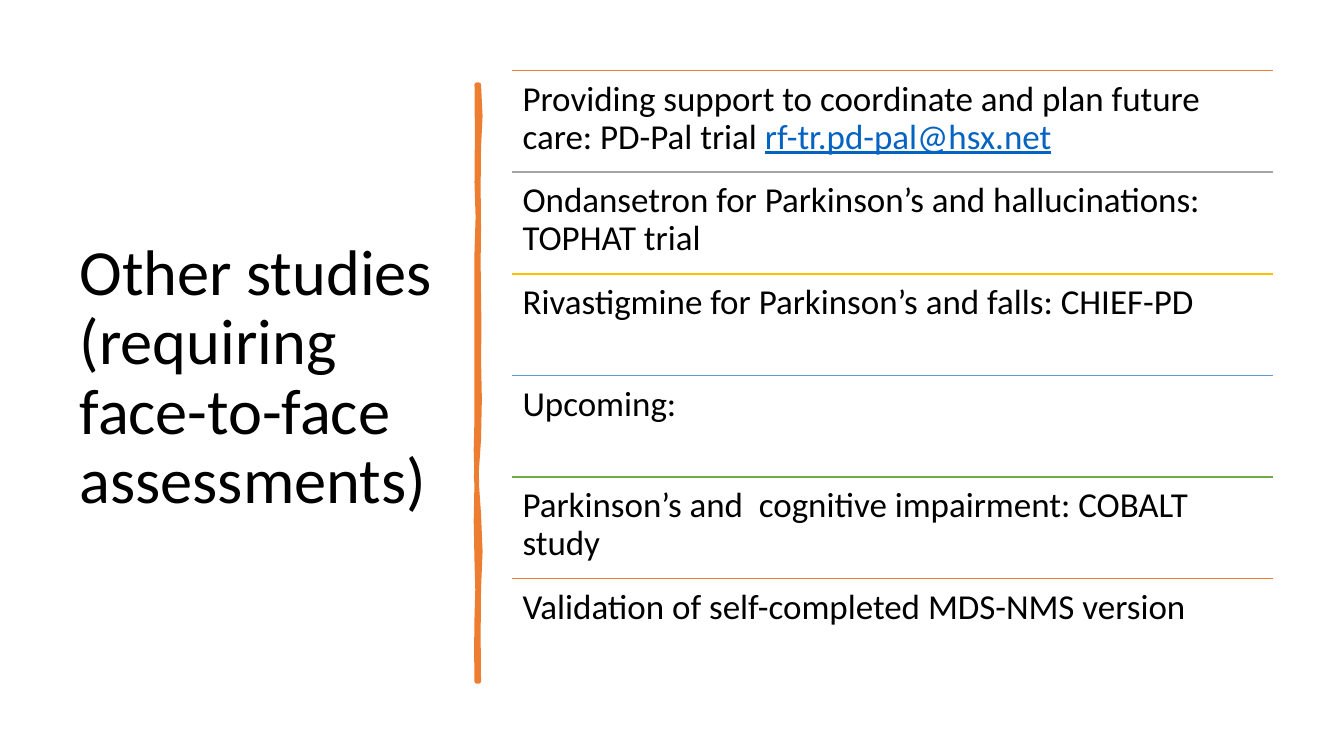
import dataclasses

import pptx
import pptx.dml.color
import pptx.enum.shapes
import pptx.enum.text
import pptx.oxml.ns
import pptx.util
from lxml import etree

SLIDE_WIDTH, SLIDE_HEIGHT = 40 / 3, 7.5
FONT = "Calibri"
BLACK, ORANGE, LINK_BLUE = "000000", "ED7D31", "0563C1"

LIST_LEFT, LIST_TOP, LIST_WIDTH, LIST_HEIGHT = 5.08, 0.7, 7.55, 6.05
LIST_MARGIN = pptx.util.Pt(7.5)
DIVIDER_TOP, DIVIDER_BOTTOM = 0.84, 6.76
DIVIDER_LEFT, DIVIDER_RIGHT = 4.73, 4.75
CURVE_STEPS = 2
UNITS_PER_INCH = 1000


@dataclasses.dataclass(frozen=True)
class Study:
    text: str
    rule_color: str
    email: str = ""


@dataclasses.dataclass(frozen=True)
class Wobble:
    """One stretch of a hand-drawn edge: bend at both ends, and where it stops."""
    first_bend: float
    second_bend: float
    end: float


STUDIES = [
    Study("Providing support to coordinate and plan future care: PD-Pal trial ",
          ORANGE, "rf-tr.pd-pal@hsx.net"),
    Study("Ondansetron for Parkinson’s and hallucinations: TOPHAT trial", "A5A5A5"),
    Study("Rivastigmine for Parkinson’s and falls: CHIEF-PD", "FFC000"),
    Study("Upcoming:", "5B9BD5"),
    Study("Parkinson’s and  cognitive impairment: COBALT study", "70AD47"),
    Study("Validation of self-completed MDS-NMS version", ORANGE),
]
ROW_HEIGHT = LIST_HEIGHT / len(STUDIES)

RIGHT_EDGE = [
    Wobble(0.02, 0.02, 1.46), Wobble(-0.02, 0.01, 2.26), Wobble(-0.01, 0, 2.94),
    Wobble(-0.01, 0.02, 3.56), Wobble(-0.02, 0.04, 4.36), Wobble(-0.04, -0.03, 5.1),
    Wobble(0.02, 0.02, 5.84), Wobble(-0.02, 0.01, 6.76),
]
LEFT_EDGE = [
    Wobble(0.01, -0.02, 6.13), Wobble(0.01, 0.01, 5.57), Wobble(-0.01, -0.01, 4.77),
    Wobble(0, -0.02, 4.15), Wobble(0.01, -0.01, 3.35), Wobble(0.01, -0.01, 2.5),
    Wobble(0.01, 0.02, 1.81), Wobble(-0.03, 0.04, 0.84),
]


def rgb(color: str) -> pptx.dml.color.RGBColor:
    return pptx.dml.color.RGBColor.from_string(color)


def write(paragraph, text: str, *, size: float, color: str = BLACK,
          underline: bool = False) -> None:
    paragraph.alignment = pptx.enum.text.PP_ALIGN.LEFT
    paragraph.line_spacing = 0.9
    run = paragraph.add_run()
    run.text = text
    run.font.name = FONT
    run.font.size = pptx.util.Pt(size)
    run.font.color.rgb = rgb(color)
    if underline:
        run.font.underline = True


def place(shape, left: float, top: float, width: float, height: float) -> None:
    shape.left, shape.top = pptx.util.Inches(left), pptx.util.Inches(top)
    shape.width, shape.height = pptx.util.Inches(width), pptx.util.Inches(height)


def add_title(slide, text: str) -> None:
    title = slide.shapes.title
    place(title, 0.69, 0.7, 3.74, 6.11)
    frame = title.text_frame
    frame.word_wrap = True
    frame.auto_size = pptx.enum.text.MSO_AUTO_SIZE.NONE
    frame.vertical_anchor = pptx.enum.text.MSO_ANCHOR.MIDDLE
    write(frame.paragraphs[0], text, size=46)


def edge_points(x: float, start: float, wobbles: list[Wobble]) -> list[tuple[int, int]]:
    """Sample the Bezier curves that make up one long edge of the divider."""
    points = [(round(x * UNITS_PER_INCH), round(start * UNITS_PER_INCH))]
    for wobble in wobbles:
        for step in range(1, CURVE_STEPS + 1):
            t = step / CURVE_STEPS
            bend = 3 * t * (1 - t) * ((1 - t) * wobble.first_bend + t * wobble.second_bend)
            y = start + t * (wobble.end - start)
            points.append((round((x + bend) * UNITS_PER_INCH), round(y * UNITS_PER_INCH)))
        start = wobble.end
    return points


def add_divider(slide) -> None:
    points = (edge_points(DIVIDER_RIGHT, DIVIDER_TOP, RIGHT_EDGE)
              + edge_points(DIVIDER_LEFT, DIVIDER_BOTTOM, LEFT_EDGE))
    builder = slide.shapes.build_freeform(
        *points[0], scale=pptx.util.Inches(1) / UNITS_PER_INCH)
    builder.add_line_segments(points[1:], close=True)
    divider = builder.convert_to_shape()
    divider.shadow.inherit = False
    divider.fill.solid()
    divider.fill.fore_color.rgb = rgb(ORANGE)
    divider.line.color.rgb = rgb(ORANGE)
    divider.line.width = pptx.util.Pt(3.25)


def add_rule(slide, top: float, color: str) -> None:
    y = pptx.util.Inches(top)
    rule = slide.shapes.add_connector(
        pptx.enum.shapes.MSO_CONNECTOR.STRAIGHT, pptx.util.Inches(LIST_LEFT), y,
        pptx.util.Inches(LIST_LEFT + LIST_WIDTH), y)
    rule.line.color.rgb = rgb(color)
    rule.line.width = pptx.util.Pt(1)
    etree.SubElement(rule._element.spPr, pptx.oxml.ns.qn("a:effectLst"))


def add_study(slide, row: int, study: Study) -> None:
    top = LIST_TOP + row * ROW_HEIGHT
    add_rule(slide, top, study.rule_color)
    box = slide.shapes.add_textbox(0, 0, 0, 0)
    place(box, LIST_LEFT, top, LIST_WIDTH, ROW_HEIGHT)
    frame = box.text_frame
    frame.word_wrap = True
    frame.margin_left = frame.margin_right = LIST_MARGIN
    frame.margin_top = frame.margin_bottom = LIST_MARGIN
    write(frame.paragraphs[0], study.text, size=25)
    if study.email:
        write(frame.paragraphs[0], study.email, size=25, color=LINK_BLUE, underline=True)


def main() -> None:
    presentation = pptx.Presentation()
    presentation.slide_width = pptx.util.Inches(SLIDE_WIDTH)
    presentation.slide_height = pptx.util.Inches(SLIDE_HEIGHT)
    title_only = presentation.slide_layouts.get_by_name("Title Only")
    slide = presentation.slides.add_slide(title_only)
    add_title(slide, "Other studies (requiring face-to-face assessments)")
    add_divider(slide)
    for row, study in enumerate(STUDIES):
        add_study(slide, row, study)
    presentation.save("out.pptx")


if __name__ == "__main__":
    main()
